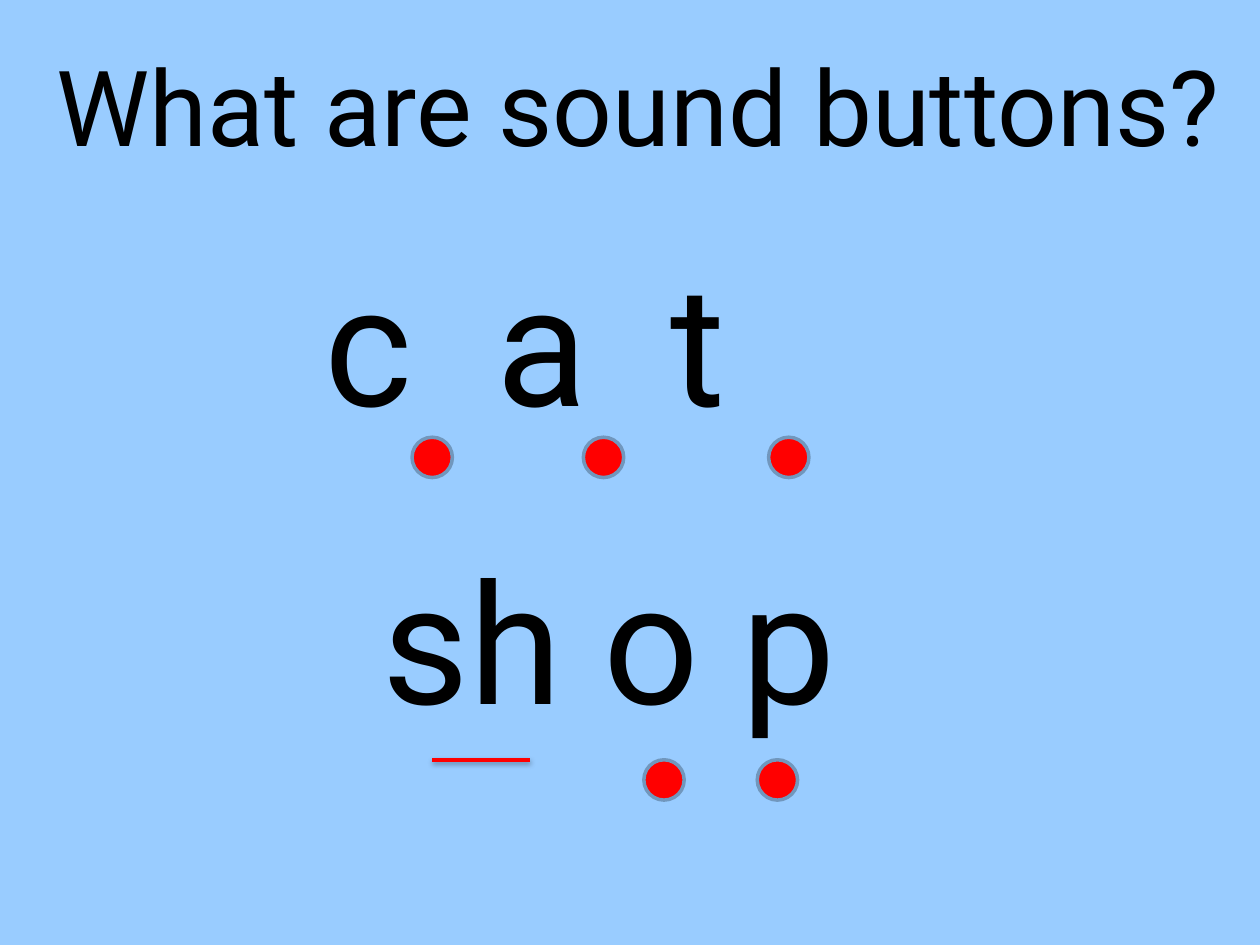
from pptx import Presentation, util as u
from pptx.dml.color import RGBColor
from pptx.enum import shapes, text
from pptx.oxml.ns import qn
from lxml import etree

SKY = RGBColor(0x99, 0xCC, 0xFF)
RED = RGBColor(0xFF, 0, 0)
RIM = RGBColor(0x71, 0x97, 0xBD)
INK = RGBColor(0, 0, 0)

deck = Presentation()
deck.slide_width, deck.slide_height = u.Inches(10), u.Inches(7.5)
slide = deck.slides.add_slide(deck.slide_layouts[6])
slide.background.fill.solid()
slide.background.fill.fore_color.rgb = SKY


def write(left, top, wide, high, lines, size):
    box = slide.shapes.add_textbox(*map(u.Inches, (left, top, wide, high)))
    frame = box.text_frame
    frame.word_wrap = True
    frame.text = "\n".join(lines)
    for para in frame.paragraphs:
        font = para.runs[0].font
        font.name, font.size, font.color.rgb = "Roboto", u.Pt(size), INK
    return frame


# Words: the first is indented, the second centred
words = write(0.5, 1.75, 9, 4.95, ["c  a  t", "sh o p"], 96)
words.margin_top = u.Inches(0.14)
cat, shop = words.paragraphs
cat._p.get_or_add_pPr().set("marL", str(u.Inches(1.98)))
shop.alignment = text.PP_ALIGN.CENTER
shop.space_before = u.Pt(55)
shop._p.get_or_add_pPr().set("marR", str(u.Inches(0.33)))

# Sound buttons under single letters
SIZE = 0.32
for row, cols in ((3.47, (3.27, 4.63, 6.1)), (6.03, (5.11, 6.01))):
    for col in cols:
        dot = slide.shapes.add_shape(
            shapes.MSO_SHAPE.OVAL, *map(u.Inches, (col, row, SIZE, SIZE)))
        dot.shadow.inherit = False
        dot.fill.solid()
        dot.fill.fore_color.rgb = RED
        dot.line.color.rgb = RIM
        dot.line.width = u.Pt(2)

# Underline for the two-letter sound, with a soft shadow
bar = slide.shapes.add_connector(
    shapes.MSO_CONNECTOR.STRAIGHT, *map(u.Inches, (3.43, 6.03, 4.21, 6.03)))
bar.line.color.rgb = RED
bar.line.width = u.Pt(2)
glow = etree.SubElement(bar._element.spPr, qn("a:effectLst"))
shade = etree.SubElement(glow, qn("a:outerShdw"), blurRad=str(u.Pt(3.1)),
                         dist=str(u.Pt(1.6)), dir="5400000", rotWithShape="0")
tint = etree.SubElement(shade, qn("a:srgbClr"), val="000000")
etree.SubElement(tint, qn("a:alpha"), val="38000")

# Title
title = write(0.35, 0.28, 9.53, 1.11, ["What are sound buttons?"], 60)
title.auto_size = text.MSO_AUTO_SIZE.SHAPE_TO_FIT_TEXT

deck.save("out.pptx")
